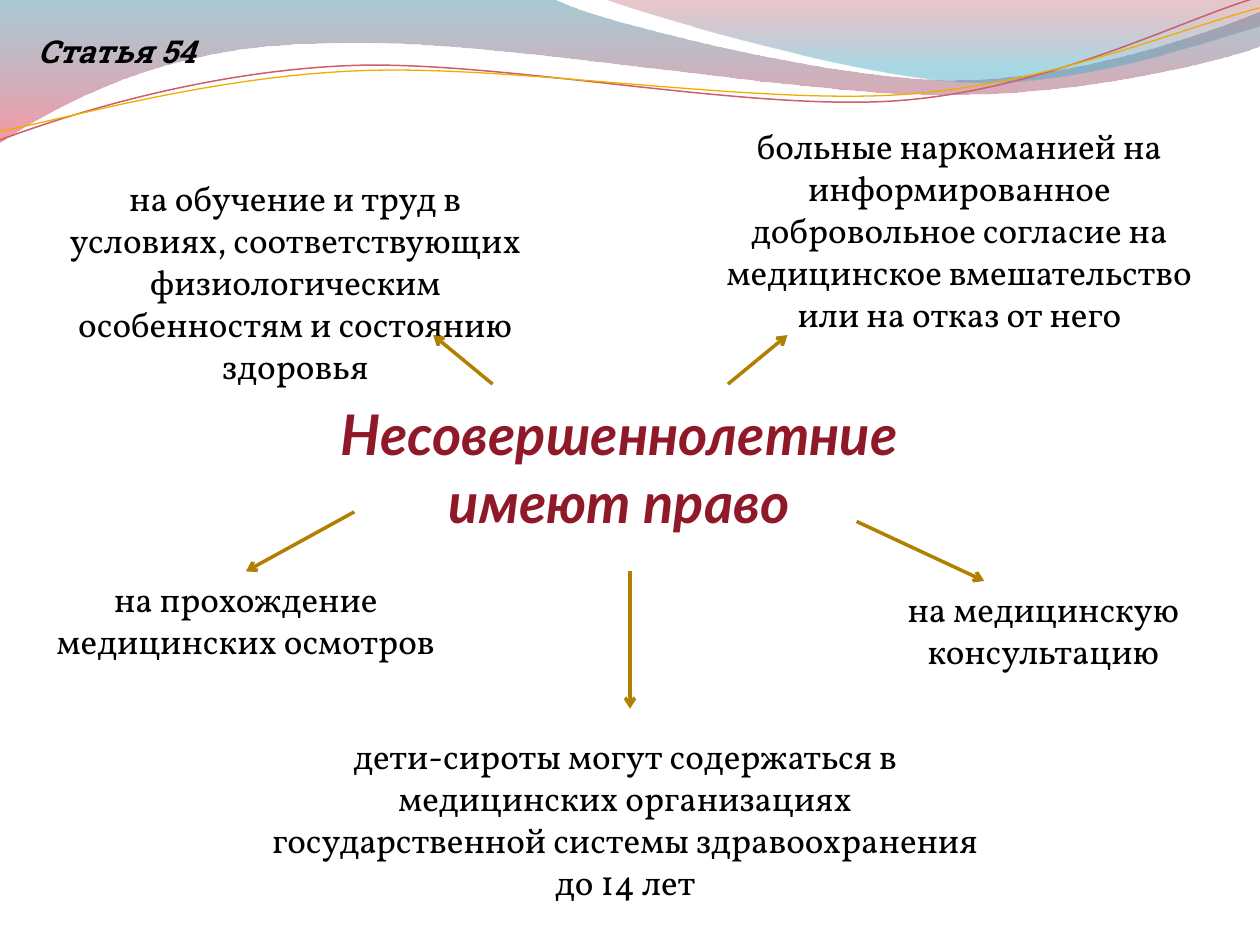
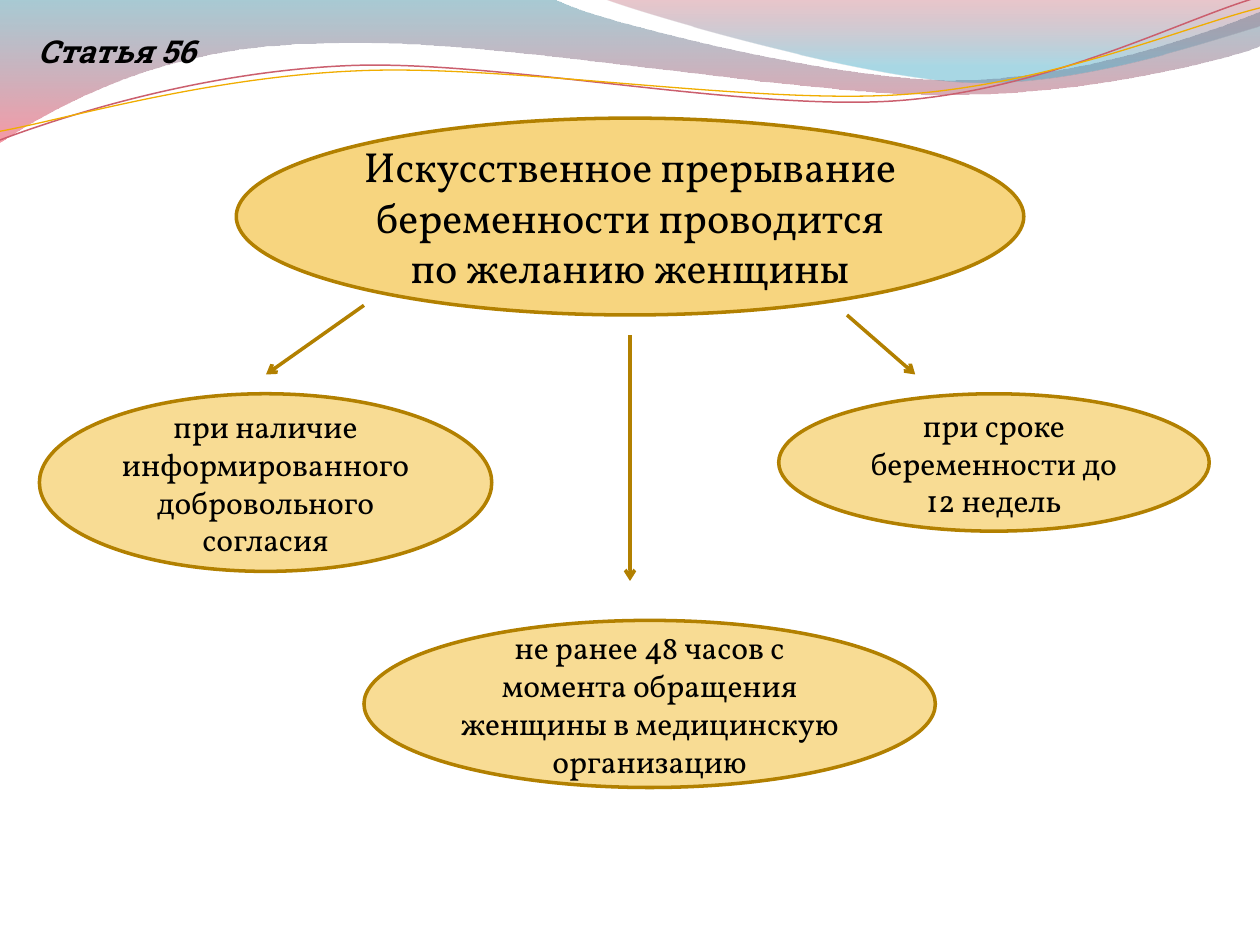
from lxml import etree
from pptx import Presentation
from pptx import util as u
from pptx.dml.color import RGBColor
from pptx.enum import shapes, text
from pptx.oxml.ns import qn

Pt = u.Pt
BLACK = RGBColor(0x00, 0x00, 0x00)
CRIMSON = RGBColor(0x90, 0x19, 0x29)
AMBER = RGBColor(0xF0, 0xAD, 0x00)
OCHRE = RGBColor(0xB2, 0x80, 0x00)
TEAL = RGBColor(0x3F, 0x8A, 0x9F)
CORAL = RGBColor(0xEF, 0x44, 0x5B)
BERRY = RGBColor(0xB8, 0x42, 0x53)
SKY = RGBColor(0x42, 0xAB, 0xC7)
ROSE = RGBColor(0xCB, 0x5F, 0x6E)

LEFT_WAVE = [(0, -0.5), (317, -0.5), (343, 12.5, 478, 45.5, 546, 45.5),
             (614, 45.5, 690, 18.5, 720, 6.5), (720.5, 26),
             (708, 31.5, 626.5, 54.5, 537, 54), (448, 54, 275, 20, 185, 24.5),
             (93, 25, 33, 60, -0.5, 81.5)]
RIGHT_WAVE = [(345, -0.5), (366.5, 8, 491, 44.5, 553.5, 47),
              (616.5, 49.5, 692, 23, 720, 15), (720, 0)]
ROSE_CURVE = [(0, 80), (34.5, 67, 114, 41, 199.5, 37.5),
              (284.5, 34, 427, 64, 513.5, 57.5), (600, 51, 675.5, 11, 718.5, -1.5)]
AMBER_CURVE = [(0, 75), (34, 69, 118, 44, 204, 40.5),
               (290, 36.5, 430, 60, 516, 54), (602, 48, 677.5, 15, 720, 4.5)]


def write(frame, words, size=20, font="Vollkorn", color=BLACK, bold=False,
          italic=False, align=text.PP_ALIGN.CENTER,
          anchor=text.MSO_ANCHOR.TOP, wrap=True):
    frame.word_wrap = wrap
    frame.vertical_anchor = anchor
    para = frame.paragraphs[0]
    para.alignment = align
    span = para.add_run()
    span.text = words
    span.font.size = Pt(size)
    span.font.name = font
    span.font.color.rgb = color
    span.font.bold = bold
    span.font.italic = italic


def bend(shape, segments):
    lines = list(shape.element.iter(qn("a:lnTo")))
    for line, segment in zip(lines, segments):
        if len(segment) == 2:
            continue
        curve = etree.Element(qn("a:cubicBezTo"))
        for x, y in zip(segment[::2], segment[1::2]):
            etree.SubElement(curve, qn("a:pt"), x=str(Pt(x) - shape.left),
                             y=str(Pt(y) - shape.top))
        line.getparent().replace(line, curve)


def set_opacity(shape, *percents):
    for color, percent in zip(shape.element.iter(qn("a:srgbClr")), percents):
        etree.SubElement(color, qn("a:alpha"), val=str(percent * 1000))


class Sheet:
    def __init__(self):
        self.deck = Presentation()
        self.deck.slide_width, self.deck.slide_height = Pt(720), Pt(540)
        self.page = None
        self.master_count = 0

    def start(self, article):
        self.page = self.deck.slides.add_slide(self.deck.slide_layouts[5])
        title = self.page.shapes.title
        title.left, title.top = Pt(14.5), Pt(14.5)
        title.width, title.height = Pt(127.5), Pt(29)
        title.text_frame.auto_size = text.MSO_AUTO_SIZE.SHAPE_TO_FIT_TEXT
        write(title.text_frame, article, size=18, font="Roboto Slab",
              bold=True, italic=True, align=text.PP_ALIGN.LEFT, wrap=False)

    def outline(self, segments, closed):
        points = [(Pt(segment[-2]), Pt(segment[-1])) for segment in segments]
        builder = self.page.shapes.build_freeform(*points[0])
        builder.add_line_segments(points[1:], close=closed)
        shape = builder.convert_to_shape()
        shape.shadow.inherit = False
        bend(shape, segments[1:])
        return shape

    def move_to_master(self, shape):
        shape.element.nvSpPr.cNvPr.id = 101 + self.master_count
        tree = self.deck.slide_master.shapes.element
        tree.insert(2 + self.master_count, shape.element)
        self.master_count += 1

    def wave(self, segments, stops):
        shape = self.outline(segments, closed=True)
        shape.line.fill.background()
        shape.fill.gradient()
        shape.fill.gradient_angle = 270
        for stop, (position, color, _) in zip(shape.fill.gradient_stops, stops):
            stop.position = position
            stop.color.rgb = color
        set_opacity(shape, *(opacity for _, _, opacity in stops))
        self.move_to_master(shape)

    def curve(self, segments, color, width):
        shape = self.outline(segments, closed=False)
        shape.fill.background()
        shape.line.color.rgb = color
        shape.line.width = Pt(width)
        self.move_to_master(shape)

    def label(self, words, place, **style):
        box = self.page.shapes.add_textbox(*map(Pt, place))
        box.text_frame.auto_size = text.MSO_AUTO_SIZE.SHAPE_TO_FIT_TEXT
        write(box.text_frame, words, **style)

    def ellipse(self, words, place, opacity=42, size=18):
        shape = self.page.shapes.add_shape(shapes.MSO_SHAPE.OVAL, *map(Pt, place))
        shape.shadow.inherit = False
        shape.fill.solid()
        shape.fill.fore_color.rgb = AMBER
        set_opacity(shape, opacity)
        shape.line.color.rgb = OCHRE
        shape.line.width = Pt(2)
        write(shape.text_frame, words, size=size, anchor=text.MSO_ANCHOR.MIDDLE)

    def arrow(self, *ends):
        line = self.page.shapes.add_connector(
            shapes.MSO_CONNECTOR.STRAIGHT, *map(Pt, ends))
        line.line.color.rgb = OCHRE
        line.line.width = Pt(2)
        properties = line.element.spPr
        etree.SubElement(properties.find(qn("a:ln")), qn("a:tailEnd"), type="arrow")
        etree.SubElement(properties, qn("a:effectLst"))


def decorate(sheet):
    sheet.wave(LEFT_WAVE, [(0, TEAL, 45), (1, CORAL, 55)])
    sheet.wave(RIGHT_WAVE, [(0, BERRY, 30), (0.8, SKY, 45)])
    sheet.curve(ROSE_CURVE, ROSE, 0.85)
    sheet.curve(AMBER_CURVE, AMBER, 0.75)


def show_rights_of_minors(sheet):
    sheet.label("Несовершеннолетние имеют право", (171, 225, 366, 85),
                size=32, font="Lato", color=CRIMSON, bold=True, italic=True)
    rights = [
        ("на прохождение медицинских осмотров", (22.5, 326.5, 236, 55.5)),
        ("на обучение и труд в условиях, соответствующих физиологическим "
         "особенностям и состоянию здоровья", (22.5, 97.5, 292.5, 127.5)),
        ("на медицинскую консультацию", (500.5, 332, 191.5, 55.5)),
        ("больные наркоманией на информированное добровольное согласие на "
         "медицинское вмешательство или на отказ от него",
         (405, 67.5, 286.5, 128)),
        ("дети-сироты могут содержаться в медицинских организациях "
         "государственной системы здравоохранения до 14 лет",
         (140.5, 416, 433.5, 80)),
    ]
    for words, place in rights:
        sheet.label(words, place)
    for ends in [(416, 219.5, 450, 191.5), (281.5, 219.5, 247.5, 191.5),
                 (202.5, 292.5, 140.5, 326.5), (489.5, 298, 562.5, 332),
                 (360, 326.5, 360, 405)]:
        sheet.arrow(*ends)


def show_termination_terms(sheet):
    sheet.ellipse("Искусственное прерывание беременности проводится "
                  "по желанию женщины", (135, 67.5, 450, 112.5),
                  opacity=50, size=24)
    terms = [
        ("при наличие информированного добровольного согласия",
         (22.5, 225, 258.5, 101.5)),
        ("при сроке беременности до 12 недель", (445, 225, 246, 78.5)),
        ("не ранее 48 часов с момента обращения женщины в медицинскую "
         "организацию", (208, 354.5, 326.5, 95.5)),
    ]
    for words, place in terms:
        sheet.ellipse(words, place)
    for ends in [(208, 174.5, 152, 214), (484, 180, 523, 214),
                 (360, 191.5, 360, 332)]:
        sheet.arrow(*ends)


def main():
    sheet = Sheet()
    sheet.start("Статья 54")
    decorate(sheet)
    show_rights_of_minors(sheet)
    sheet.start("Статья 56")
    show_termination_terms(sheet)
    sheet.deck.save("out.pptx")


if __name__ == "__main__":
    main()
